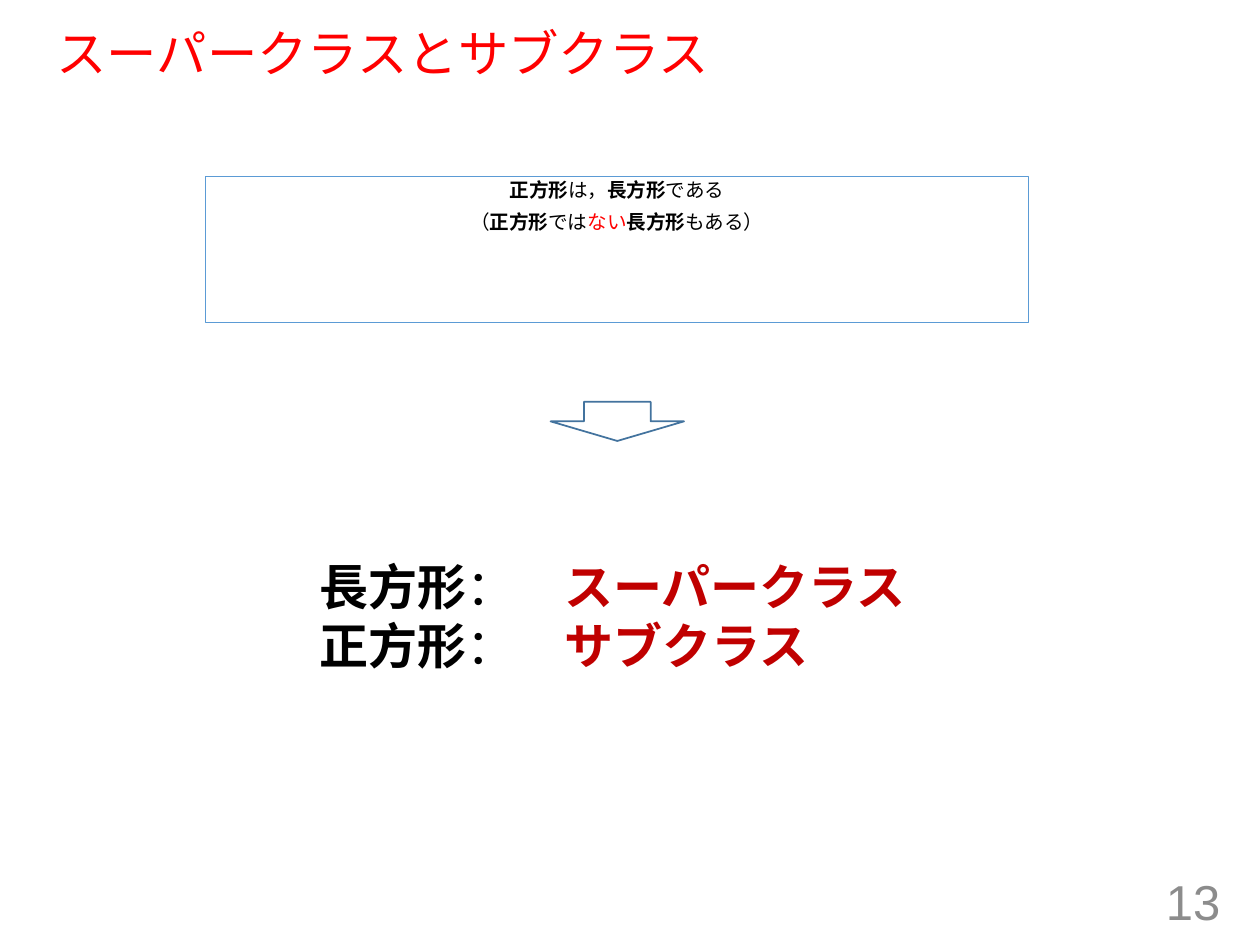
from lxml import etree
from pptx import Presentation
from pptx import util as u
from pptx.dml.color import RGBColor
from pptx.enum import shapes, text
from pptx.oxml.ns import qn

RED = RGBColor(0xFF, 0x00, 0x00)
CRIMSON = RGBColor(0xC0, 0x00, 0x00)
BLACK = RGBColor(0x00, 0x00, 0x00)
GRAY = RGBColor(0x8C, 0x8C, 0x8C)
BLUE = RGBColor(0x5B, 0x9B, 0xD5)
STEEL = RGBColor(0x43, 0x73, 0x9E)
SANS = "Arial"
KANJI = "Noto Sans CJK JP"
LEFT, MID, RIGHT = text.PP_ALIGN.LEFT, text.PP_ALIGN.CENTER, text.PP_ALIGN.RIGHT


def style(run, size, face, color, bold):
    font = run.font
    font.size, font.name, font.bold = u.Pt(size), face, bold
    font.color.rgb = color
    east = etree.Element(qn("a:ea"), typeface=KANJI)
    run.font._element.find(qn("a:latin")).addnext(east)


def write(shape, lines, size, face=SANS, align=LEFT, gap=0, lead=None):
    """Each line is a list of (words, color, bold)."""
    frame = shape.text_frame
    for i, line in enumerate(lines):
        para = frame.add_paragraph() if i else frame.paragraphs[0]
        para.alignment, para.line_spacing = align, lead
        if i and gap:
            para.space_before = u.Pt(gap)
        for words, color, bold in line:
            run = para.add_run()
            run.text = words
            style(run, size, face, color, bold)


def label(slide, box, anchor=text.MSO_ANCHOR.TOP, wrap=True):
    shape = slide.shapes.add_textbox(*map(u.Cm, box))
    shape.text_frame.word_wrap = wrap
    shape.text_frame.vertical_anchor = anchor
    return shape


def outline(slide, kind, box, color, width):
    shape = slide.shapes.add_shape(kind, *map(u.Cm, box))
    shape.shadow.inherit = False
    shape.fill.background()
    shape.line.color.rgb = color
    shape.line.width = u.Pt(width)
    return shape


def main():
    deck = Presentation()
    deck.slide_width, deck.slide_height = u.Cm(25.4), u.Cm(19.05)
    slide = deck.slides.add_slide(deck.slide_layouts[6])
    middle = text.MSO_ANCHOR.MIDDLE
    kinds = shapes.MSO_SHAPE

    # Title
    title = label(slide, (0.89, 0.48, 23.5, 1.3), middle)
    write(title, [[("スーパークラスとサブクラス", RED, False)]], 28.8, lead=0.9)

    # Framed statement
    frame = outline(slide, kinds.RECTANGLE, (4.14, 3.56, 16.59, 2.95), BLUE, 0.75)
    frame.text_frame.word_wrap = True
    frame.text_frame.vertical_anchor = text.MSO_ANCHOR.TOP
    square, oblong = ("正方形", BLACK, True), ("長方形", BLACK, True)
    facts = [
        [square, ("は，", BLACK, False), oblong, ("である", BLACK, False)],
        [("（", BLACK, False), square, ("では", BLACK, False),
         ("ない", RED, False), oblong, ("もある）", BLACK, False)],
    ]
    write(frame, facts, 11.2, align=MID, gap=7.6, lead=0.8)

    # Arrow to the conclusion
    outline(slide, kinds.DOWN_ARROW, (11.1, 8.1, 2.69, 0.79), STEEL, 1)

    # Conclusion
    roles = label(slide, (6.2, 11.1, 12.47, 2.64), wrap=False)
    pairs = [(oblong, "スーパークラス"), (square, "サブクラス")]
    write(roles, [[name, ("：　", BLACK, False), (role, CRIMSON, True)]
                  for name, role in pairs], 28, KANJI)

    # Slide number
    number = label(slide, (19.13, 17.65, 5.72, 1.02), middle)
    write(number, [[("13", GRAY, False)]], 28, align=RIGHT)

    deck.save("out.pptx")


if __name__ == "__main__":
    main()
